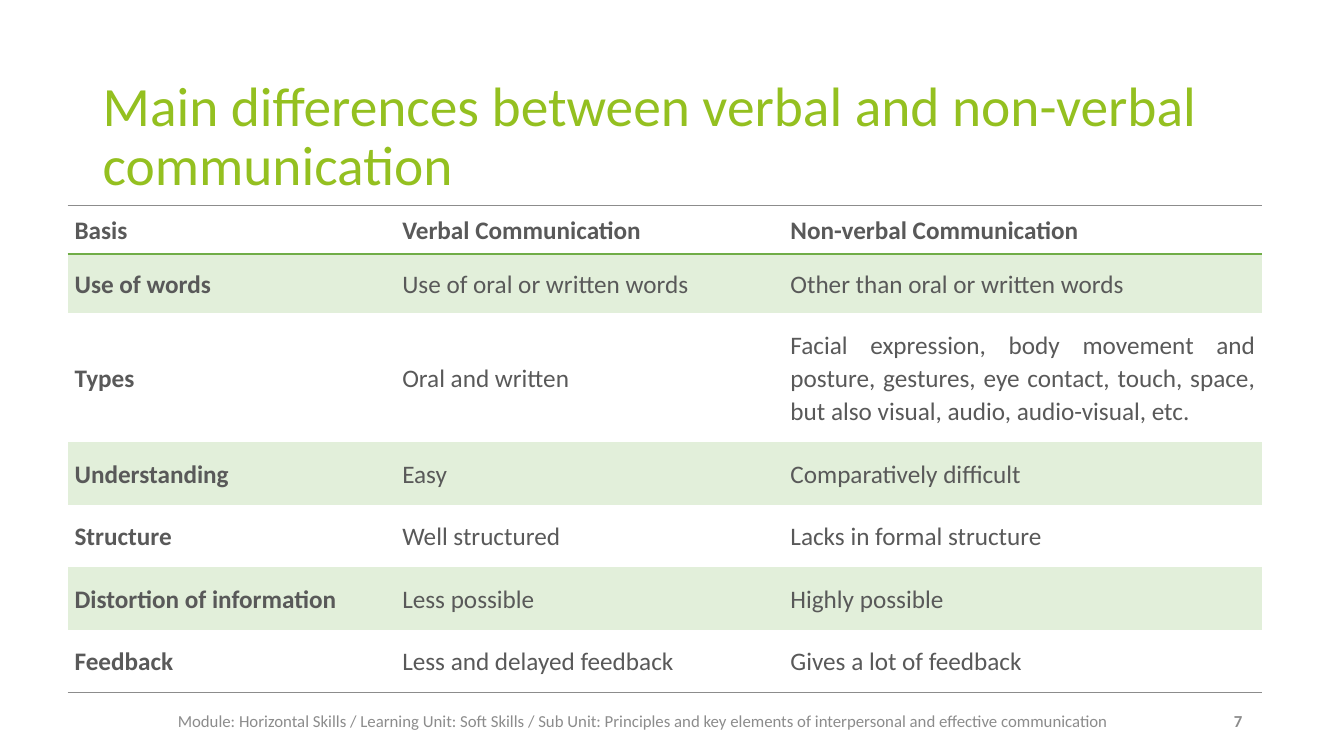
from lxml import etree
from pptx import Presentation
from pptx.dml.color import RGBColor
from pptx.enum.text import MSO_ANCHOR, PP_ALIGN
from pptx.oxml.ns import qn
from pptx.util import Inches, Pt

MIDDLE = MSO_ANCHOR.MIDDLE
LEFT, CENTER, RIGHT, JUSTIFY = PP_ALIGN.LEFT, PP_ALIGN.CENTER, PP_ALIGN.RIGHT, PP_ALIGN.JUSTIFY
COLORS = {"title": "94C020", "body": "595959", "footer": "8C8C8C",
          "band": "E2EFDA", "rule": "70AD47", "edge": "8C8C8C"}
FONT = "Calibri"
PLAIN_TABLE_STYLE = "{2D5ABB26-0587-4C30-8999-92F81FD0307C}"
COLUMN_WIDTHS = [3.25, 3.85, 4.75]
ROW_HEIGHTS = [0.48, 0.59, 1.28] + [0.62] * 4
ROWS = [
    ("Basis", "Verbal Communication", "Non-verbal Communication"),
    ("Use of words", "Use of oral or written words", "Other than oral or written words"),
    ("Types", "Oral and written",
     "Facial expression, body movement and posture, gestures, eye contact, "
     "touch, space, but also visual, audio, audio-visual, etc."),
    ("Understanding", "Easy", "Comparatively difficult"),
    ("Structure", "Well structured", "Lacks in formal structure"),
    ("Distortion of information", "Less possible", "Highly possible"),
    ("Feedback", "Less and delayed feedback", "Gives a lot of feedback"),
]


def set_attributes(target, values):
    """Set each named attribute of the target."""
    for name, value in values.items():
        setattr(target, name, value)


def write_text(paragraph, text, size, color, bold=False, **layout):
    """Write one formatted run into a paragraph."""
    set_attributes(paragraph, layout)
    run = paragraph.add_run()
    run.text = text
    set_attributes(run.font, {"name": FONT, "size": Pt(size), "bold": bold})
    run.font.color.rgb = RGBColor.from_string(COLORS[color])


def add_label(slide, box, text, size, color, **style):
    """Add a wrapped, vertically centred text box."""
    frame = slide.shapes.add_textbox(*map(Inches, box)).text_frame
    set_attributes(frame, {"word_wrap": True, "vertical_anchor": MIDDLE})
    write_text(frame.paragraphs[0], text, size, color, **style)


def add_border(cell, side, color):
    """Draw a one-point border on one side of a cell."""
    line = etree.SubElement(cell._tc.get_or_add_tcPr(), qn(f"a:{side}"), w=str(Pt(1)))
    fill = etree.SubElement(line, qn("a:solidFill"))
    etree.SubElement(fill, qn("a:srgbClr"), val=COLORS[color])


def fill_cell(cell, text, row, column):
    """Format one comparison cell according to its row and column."""
    set_attributes(cell, {"vertical_anchor": MIDDLE,
                          "margin_left": Inches(0.07), "margin_right": Inches(0.07),
                          "margin_top": 0, "margin_bottom": 0})
    if row == 0:
        add_border(cell, "lnT", "edge")
        add_border(cell, "lnB", "rule")
    elif row == len(ROWS) - 1:
        add_border(cell, "lnB", "edge")
    if row % 2:
        cell.fill.solid()
        cell.fill.fore_color.rgb = RGBColor.from_string(COLORS["band"])
    else:
        cell.fill.background()
    write_text(cell.text_frame.paragraphs[0], text, 18, "body",
               bold=row == 0 or column == 0, alignment=JUSTIFY, line_spacing=1.07,
               space_after=Pt(8 if row == column == 0 else 11.2))


def add_comparison(slide, box):
    """Add the table comparing verbal and non-verbal communication."""
    table = slide.shapes.add_table(len(ROWS), len(COLUMN_WIDTHS), *map(Inches, box)).table
    table._tbl.tblPr.find(qn("a:tableStyleId")).text = PLAIN_TABLE_STYLE
    for column, width in zip(table.columns, COLUMN_WIDTHS):
        column.width = Inches(width)
    for row, height in zip(table.rows, ROW_HEIGHTS):
        row.height = Inches(height)
    for row, texts in enumerate(ROWS):
        for column, text in enumerate(texts):
            fill_cell(table.cell(row, column), text, row, column)


def add_footer(slide, box):
    """Add the module line and the slide number."""
    left, top, width, height = box
    add_label(slide, (left, top, width - 0.58, height),
              "Module: Horizontal Skills / Learning Unit: Soft Skills / Sub Unit: "
              "Principles and key elements of interpersonal and effective communication",
              12, "footer", alignment=CENTER)
    add_label(slide, (left + width - 0.5, top + 0.13, 0.5, 0.4), "7",
              12, "footer", bold=True, alignment=RIGHT)


def main():
    """Build and save the slide."""
    presentation = Presentation()
    set_attributes(presentation, {"slide_width": Inches(13.33), "slide_height": Inches(7.5)})
    slide = presentation.slides.add_slide(presentation.slide_layouts[6])
    add_label(slide, (0.92, 0.89, 11.5, 0.96),
              "Main differences between verbal and non-verbal communication",
              39.6, "title", alignment=LEFT, line_spacing=0.9)
    add_comparison(slide, (0.67, 2.04, sum(COLUMN_WIDTHS), sum(ROW_HEIGHTS)))
    add_footer(slide, (0.92, 6.82, 11.5, 0.66))
    presentation.save("out.pptx")


if __name__ == "__main__":
    main()
